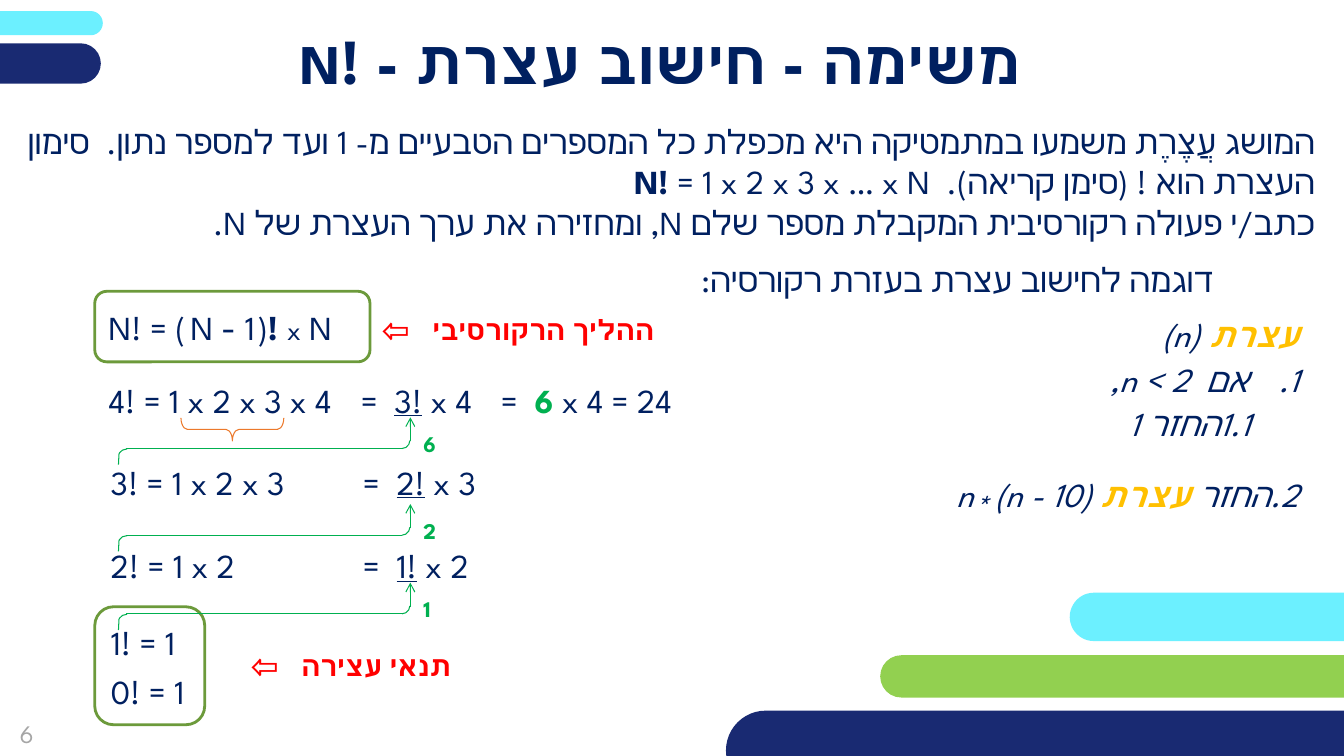
from lxml import etree
from pptx import Presentation
from pptx import util as u
from pptx.dml.color import RGBColor
from pptx.enum import shapes, text
from pptx.oxml.ns import qn

NAVY, INK, CYAN, LIME = "192A72", "002060", "6CF0FF", "92D050"
GREEN, RED, GOLD, GREY = "00B050", "FF0000", "FFC000", "A6A6A6"
MOSS, RUST = "6C9A3B", "EC792B"
KIND = shapes.MSO_SHAPE
SIDE = {"l": text.PP_ALIGN.LEFT, "c": text.PP_ALIGN.CENTER, "r": text.PP_ALIGN.RIGHT}


def hue(code):
    return RGBColor.from_string(code)


def cell(n):
    """Ten grid columns or rows make an inch."""
    return u.Inches(n / 10)


def node(parent, tag, **attrs):
    return etree.SubElement(parent, qn(tag), attrs)


def write(para, words, size=24, color=INK, bold=False, slant=False, under=False, drop=0):
    """Add one run of text with its format."""
    run = para.add_run()
    run.text = words
    font = run.font
    font.name, font.size, font.bold = Deck.face, u.Pt(size), bold
    font.italic, font.underline = slant, under
    font.color.rgb = hue(color)
    props = font._element
    if drop:
        props.set("baseline", str(-drop * 1000))
    node(props, "a:cs", typeface=Deck.face)


class Deck:
    face = "League Spartan"

    def __init__(self):
        self.file = Presentation()
        self.file.slide_width, self.file.slide_height = u.Inches(13.33), u.Inches(7.5)
        self.page = self.file.slides.add_slide(self.file.slide_layouts[6])

    def shape(self, kind, at, adj, fill=None, line=None, width=0.75, turn=0):
        item = self.page.shapes.add_shape(kind, *map(cell, at))
        item.shadow.inherit = False
        item.rotation = turn
        for i, value in enumerate(adj):
            item.adjustments[i] = value
        if fill:
            item.fill.solid()
            item.fill.fore_color.rgb = hue(fill)
        else:
            item.fill.background()
        if line:
            item.line.color.rgb = hue(line)
            item.line.width = u.Pt(width)
        else:
            item.line.fill.background()

    def line(self, start, end, color, arrow=False):
        item = self.page.shapes.add_connector(
            shapes.MSO_CONNECTOR.STRAIGHT, *map(cell, start + end))
        item.line.color.rgb = hue(color)
        item.line.width = u.Pt(0.75)
        if arrow:
            node(item.line._get_or_add_ln(), "a:tailEnd", type="arrow")
        node(item._element.spPr, "a:effectLst")

    def text(self, at, paras, side="l", rtl=False, top=False, inset=True, **style):
        """Each paragraph is a list of (words, format) runs and a dict of its layout."""
        frame = self.page.shapes.add_textbox(*map(cell, at)).text_frame
        frame.word_wrap = True
        frame.vertical_anchor = text.MSO_ANCHOR.TOP if top else text.MSO_ANCHOR.MIDDLE
        if not inset:
            frame.margin_left = frame.margin_right = frame.margin_top = frame.margin_bottom = 0
        for i, (runs, plan) in enumerate(paras):
            para = frame.add_paragraph() if i else frame.paragraphs[0]
            self.plan(para, side, rtl, **plan)
            for words, extra in runs:
                write(para, words, **{**style, **extra})

    def plan(self, para, side, rtl, before=0, after=0, pitch=None, left=0, hang=0,
             number=False, tab=0):
        para.alignment = SIDE[side]
        para.space_before, para.space_after = u.Pt(before), u.Pt(after)
        if pitch:
            para.line_spacing = pitch
        props = para._p.get_or_add_pPr()
        props.set("rtl", str(int(rtl)))
        props.set("marL", str(cell(left)))
        props.set("indent", str(cell(-hang)))
        if number:
            node(props, "a:buFont", typeface="+mj-lt")
            node(props, "a:buAutoNum", type="arabicPeriod")
        if tab:
            node(node(props, "a:tabLst"), "a:tab", pos=str(cell(tab)), algn="l")

    def bar(self, at, fill):
        self.shape(KIND.ROUNDED_RECTANGLE, at, [0.5], fill=fill)

    def frame(self, at):
        self.shape(KIND.ROUNDED_RECTANGLE, at, [0.17], line=MOSS, width=2)

    def step(self, row, value):
        """Green path that carries a value up to the line above."""
        self.line((12.5, row), (39.9, row), GREEN)
        self.line((40.7, row - 0.7), (40.7, row - 3.1), GREEN, arrow=True)
        self.line((11.75, row + 1.6), (11.8, row + 0.6), GREEN)
        self.shape(KIND.ARC, (39.05, row - 1.6, 1.6, 1.6), [162.53, 215.19], line=GREEN, turn=90)
        self.shape(KIND.ARC, (11.8, row, 1.5, 1.6), [170.53, 2.81], line=GREEN, turn=270)
        self.text((41.0, row - 2.3, 3, 3.7), [([(value, {})], {})],
                  top=True, size=16, color=GREEN, bold=True)


def main():
    deck = Deck()

    # Corner bars
    for at, fill in (((72, 70.5, 65.5, 7.9), NAVY), ((106.1, 58.8, 38.2, 4.8), CYAN),
                     ((-13.4, 1.1, 23.6, 2.4), CYAN), ((-22.5, 4.3, 32.5, 4), NAVY),
                     ((87.3, 65, 52.1, 4.2), LIME)):
        deck.bar(at, fill)

    # Title and page number
    deck.text((11.2, 1.7, 107.2, 8.5),
              [([("משימה - חישוב עצרת - !", {}), ("N ", {"size": 40})], {})],
              side="c", rtl=True, inset=False, size=44, bold=True)
    deck.text((-1.8, 69.9, 8.9, 5.7), [([("6", {})], {})], side="c", size=18, color=GREY)

    # Task
    deck.text((-1.9, 11.5, 133.3, 20), [
        ([("המושג עֲצֶרֶת משמעו במתמטיקה היא מכפלת כל המספרים הטבעיים מ- 1 ועד למספר נתון.  "
           "סימון העצרת הוא ! (סימן קריאה).  ", {}),
          ("N!", {"bold": True}), (" = 1 x 2 x 3 x … x N", {})], {}),
        ([("כתב/י פעולה רקורסיבית המקבלת מספר שלם N, ומחזירה את ערך העצרת של N.", {})], {}),
        ([("דוגמה לחישוב עצרת בעזרת רקורסיה:", {})], {"before": 12, "left": 10}),
    ], side="r", rtl=True, top=True)

    # Recursive rule and stop rule
    deck.frame((9.4, 28.9, 27.3, 7))
    deck.text((9.8, 29.4, 27, 5.7), [([
        ("N! = (", {}), (" ", {"size": 14}), ("N ", {}), ("-", {"size": 28}), (" 1", {}),
        (" ", {"size": 8}), (")", {}), ("! ", {"bold": True}), ("x", {"size": 20}),
        (" N", {})], {})])
    deck.frame((9.4, 60.2, 10.9, 11.7))
    deck.text((10, 57.1, 10.1, 18),
              [([("1! = 1", {})], {"after": 6}), ([("0! = 1", {})], {})])
    for at, label, tab in (((36.9, 29.9, 34, 5), "ההליך הרקורסיבי", 5.2),
                           ((23.9, 63.3, 24, 5), "תנאי עצירה", 4.3)):
        deck.text(at, [([("⇦\t", {}), (label, {"size": 20, "bold": True})], {"tab": tab})],
                  color=RED)

    # Unfolding of 4!
    for col, row, left, call, right in ((9.8, 37.2, "4! = 1 x 2 x 3 x 4", "3!", " x 4"),
                                        (10, 45.3, "3! = 1 x 2 x 3", "2!", " x 3"),
                                        (10, 53.6, "2! = 1 x 2", "1!", " x 2")):
        deck.text((col, row, 28, 5), [([(left, {})], {})])
        deck.text((col + 25, row, 15, 5),
                  [([("=  ", {}), (call, {"under": True}), (right, {})], {})])
    deck.text((48.7, 37.2, 22.4, 5), [([
        ("=  ", {}), ("6", {"color": GREEN, "bold": True}), (" x 4 = 24", {})], {})])
    for row, value in ((44.5, "6"), (53.1, "2"), (60.9, "1")):
        deck.step(row, value)
    deck.shape(KIND.LEFT_BRACE, (21.9, 37.5, 2.3, 10.2), [0.28, 0.5], line=RUST, turn=270)

    # Pseudocode
    gold = {"color": GOLD, "bold": True}
    gap = {"pitch": 0.9, "after": 6}
    deck.text((76.4, 31.1, 53.4, 19.3), [
        ([("עצרת ", gold), ("(n)", {})], gap),
        ([("אם  n < 2, ", {})], {**gap, "left": 5, "hang": 5, "number": True}),
        ([("1.1החזר 1", {})], {**gap, "left": 4.8}),
        ([("2.החזר ", {}), ("עצרת", gold), (" (n - 10)", {}), (" ", {"size": 40, "drop": 25}),
          ("*", {"size": 40, "drop": 20}), ("n", {})], gap),
    ], side="r", rtl=True, top=True, slant=True)

    deck.file.save("out.pptx")


if __name__ == "__main__":
    main()
